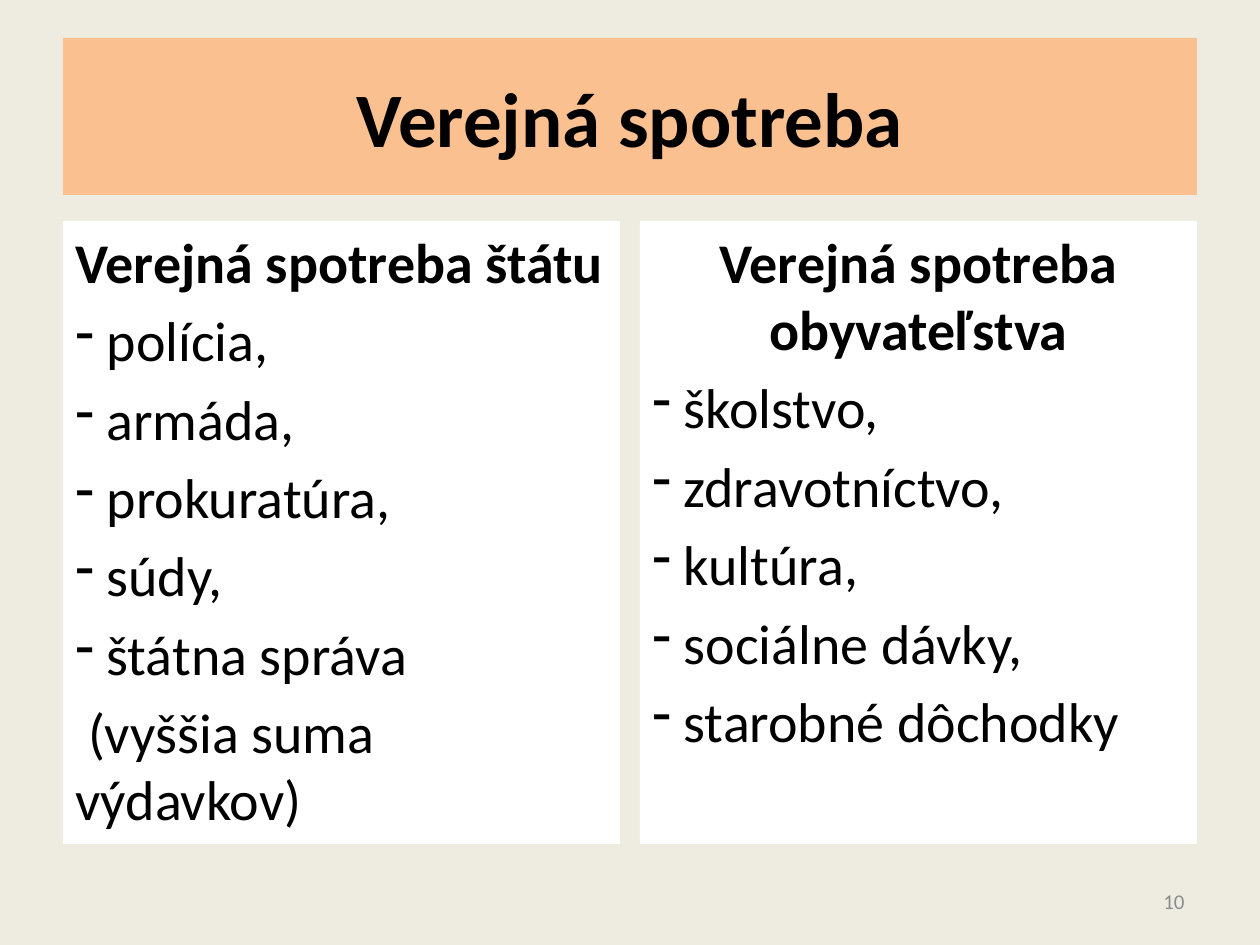
from lxml import etree
from pptx import Presentation
from pptx.dml.color import RGBColor
from pptx.enum.text import MSO_ANCHOR, PP_ALIGN
from pptx.oxml.ns import qn
from pptx.util import Pt

LEFT, CENTER, RIGHT = PP_ALIGN.LEFT, PP_ALIGN.CENTER, PP_ALIGN.RIGHT
TOP, MIDDLE = MSO_ANCHOR.TOP, MSO_ANCHOR.MIDDLE
EMU_PER_PX = 914400 / 126


def px(length):
    return round(length * EMU_PER_PX)


def add_text(paragraph, text, size, color, align, bold=False):
    paragraph.alignment = align
    run = paragraph.add_run()
    run.text = text
    run.font.name = "Calibri"
    run.font.size = Pt(size)
    run.font.bold = bold
    run.font.color.rgb = RGBColor.from_string(color)


prs = Presentation()
prs.slide_width, prs.slide_height = px(1260), px(945)
slide = prs.slides.add_slide(prs.slide_layouts[5])
slide.background.fill.solid()
slide.background.fill.fore_color.rgb = RGBColor.from_string("EEECE1")

title = slide.shapes.title
title.left, title.top, title.width, title.height = px(63), px(38), px(1134), px(157)
title.fill.solid()
title.fill.fore_color.rgb = RGBColor.from_string("FAC090")
title.text_frame.vertical_anchor = MIDDLE
add_text(title.text_frame.paragraphs[0], "Verejná spotreba", 44, "000000", CENTER, True)

columns = [
    (63, "Verejná spotreba štátu", LEFT,
     ["polícia,", "armáda,", "prokuratúra,", "súdy,", "štátna správa"],
     [" (vyššia suma výdavkov)"]),
    (640, "Verejná spotreba obyvateľstva", CENTER,
     ["školstvo,", "zdravotníctvo,", "kultúra,", "sociálne dávky,", "starobné dôchodky"],
     []),
]
for left, heading, heading_align, items, remarks in columns:
    column = slide.shapes.add_textbox(px(left), px(221), px(557), px(623))
    column.fill.solid()
    column.fill.fore_color.rgb = RGBColor.from_string("FFFFFF")
    frame = column.text_frame
    frame.word_wrap = True
    frame.vertical_anchor = TOP
    add_text(frame.paragraphs[0], heading, 32, "000000", heading_align, True)
    for item in items:
        entry = frame.add_paragraph()
        add_text(entry, " " + item, 32, "000000", LEFT)
        bullet = etree.SubElement(entry._p.get_or_add_pPr(), qn("a:buChar"))
        bullet.set("char", "-")
    for remark in remarks:
        add_text(frame.add_paragraph(), remark, 32, "000000", LEFT)
    for paragraph in frame.paragraphs:
        paragraph.space_before = Pt(6.4)

page_number = slide.shapes.add_textbox(px(903), px(876), px(294), px(50))
page_number.text_frame.word_wrap = True
page_number.text_frame.vertical_anchor = MIDDLE
add_text(page_number.text_frame.paragraphs[0], "10", 12, "8C8C8C", RIGHT)

prs.save("out.pptx")
